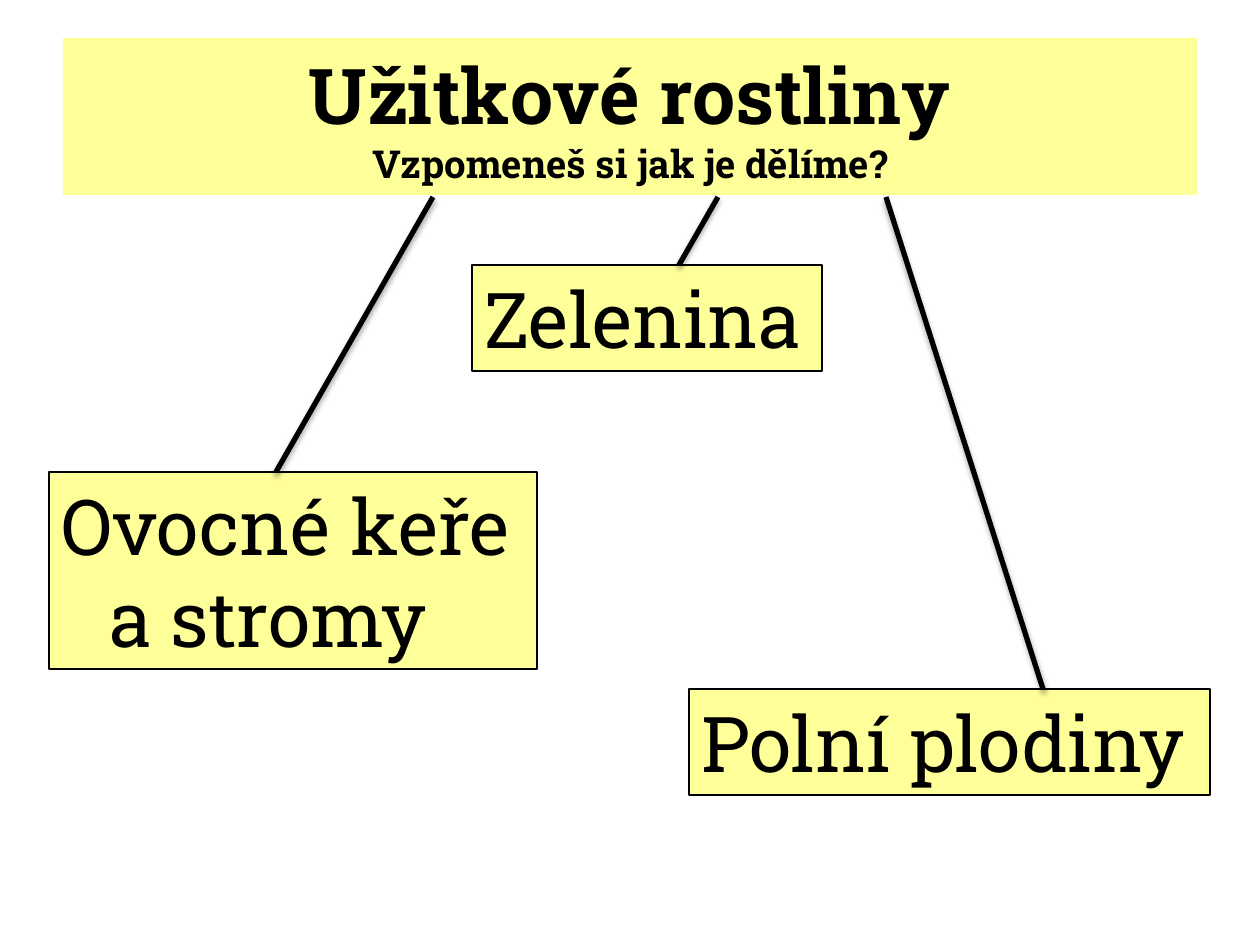
from dataclasses import dataclass

from lxml.etree import SubElement as Sub
from pptx import Presentation
from pptx.dml.color import RGBColor
from pptx.enum.shapes import MSO_CONNECTOR as Conn, MSO_SHAPE as Kind
from pptx.enum.text import MSO_ANCHOR as Anchor, MSO_AUTO_SIZE as Auto, PP_ALIGN as Align
from pptx.oxml.ns import qn
from pptx.util import Emu, Inches, Pt

BLACK = RGBColor(0, 0, 0)
YELLOW = RGBColor(0xFF, 0xFF, 0x57)
FONT = "Roboto Slab"
SCALE = 914400 / 126
INDENT = Inches(0.38)


@dataclass
class Box:
    left: int
    top: int
    width: int
    height: int
    text: str = ""
    wrap: bool = False


@dataclass
class Line:
    x1: int
    y1: int
    x2: int
    y2: int


HEAD = Box(63, 38, 1134, 157, wrap=True)
BOXES = [
    Box(49, 472, 488, 197, "Ovocné keře a stromy", True),
    Box(472, 265, 350, 106, "Zelenina"),
    Box(689, 689, 521, 106, "Polní plodiny"),
]
LINES = [
    Line(718, 197, 679, 265),
    Line(433, 197, 276, 472),
    Line(886, 197, 1043, 689),
]


def px(*nums: int) -> list[Emu]:
    return [Emu(round(num * SCALE)) for num in nums]


def add_run(para, text: str, size: int, bold: bool = False) -> None:
    run = para.add_run()
    run.text = text
    font = run.font
    font.name, font.size, font.bold = FONT, Pt(size), bold
    font.color.rgb = BLACK


def add_rect(slide, box: Box):
    shape = slide.shapes.add_shape(
        Kind.RECTANGLE, *px(box.left, box.top, box.width, box.height))
    shape.shadow.inherit = False
    shape.fill.solid()
    shape.fill.fore_color.rgb = YELLOW
    tint = next(shape.fill._xPr.iter(qn("a:srgbClr")))
    Sub(tint, qn("a:alpha"), val="60000")
    shape.text_frame.word_wrap = box.wrap
    return shape


def add_head(slide) -> None:
    shape = add_rect(slide, HEAD)
    shape.line.fill.background()
    frame = shape.text_frame
    frame.vertical_anchor = Anchor.MIDDLE
    para = frame.paragraphs[0]
    para.alignment = Align.CENTER
    add_run(para, "Užitkové rostliny", 44, True)
    para.add_line_break()
    add_run(para, "Vzpomeneš si jak je dělíme?", 22, True)


def add_box(slide, box: Box) -> None:
    shape = add_rect(slide, box)
    shape.line.color.rgb = BLACK
    shape.line.width = Pt(0.75)
    frame = shape.text_frame
    frame.vertical_anchor = Anchor.TOP
    frame.auto_size = Auto.NONE if box.wrap else Auto.SHAPE_TO_FIT_TEXT
    para = frame.paragraphs[0]
    para.alignment = Align.LEFT
    props = para._p.get_or_add_pPr()
    props.set("marL", str(INDENT))
    props.set("indent", str(-INDENT))
    add_run(para, box.text, 44)


def add_line(slide, line: Line) -> None:
    link = slide.shapes.add_connector(
        Conn.STRAIGHT, *px(line.x1, line.y1, line.x2, line.y2))
    link.line.color.rgb = BLACK
    link.line.width = Pt(3)
    effects = Sub(link._element.spPr, qn("a:effectLst"))
    shade = Sub(effects, qn("a:outerShdw"), blurRad=str(Pt(3.1)),
                dist=str(Pt(1.8)), dir="5400000", rotWithShape="0")
    tint = Sub(shade, qn("a:srgbClr"), val=str(BLACK))
    Sub(tint, qn("a:alpha"), val="35000")


def main() -> None:
    deck = Presentation()
    deck.slide_width, deck.slide_height = Inches(10), Inches(7.5)
    slide = deck.slides.add_slide(deck.slide_layouts[6])
    add_head(slide)
    for box in BOXES:
        add_box(slide, box)
    for line in LINES:
        add_line(slide, line)
    deck.save("out.pptx")


if __name__ == "__main__":
    main()
